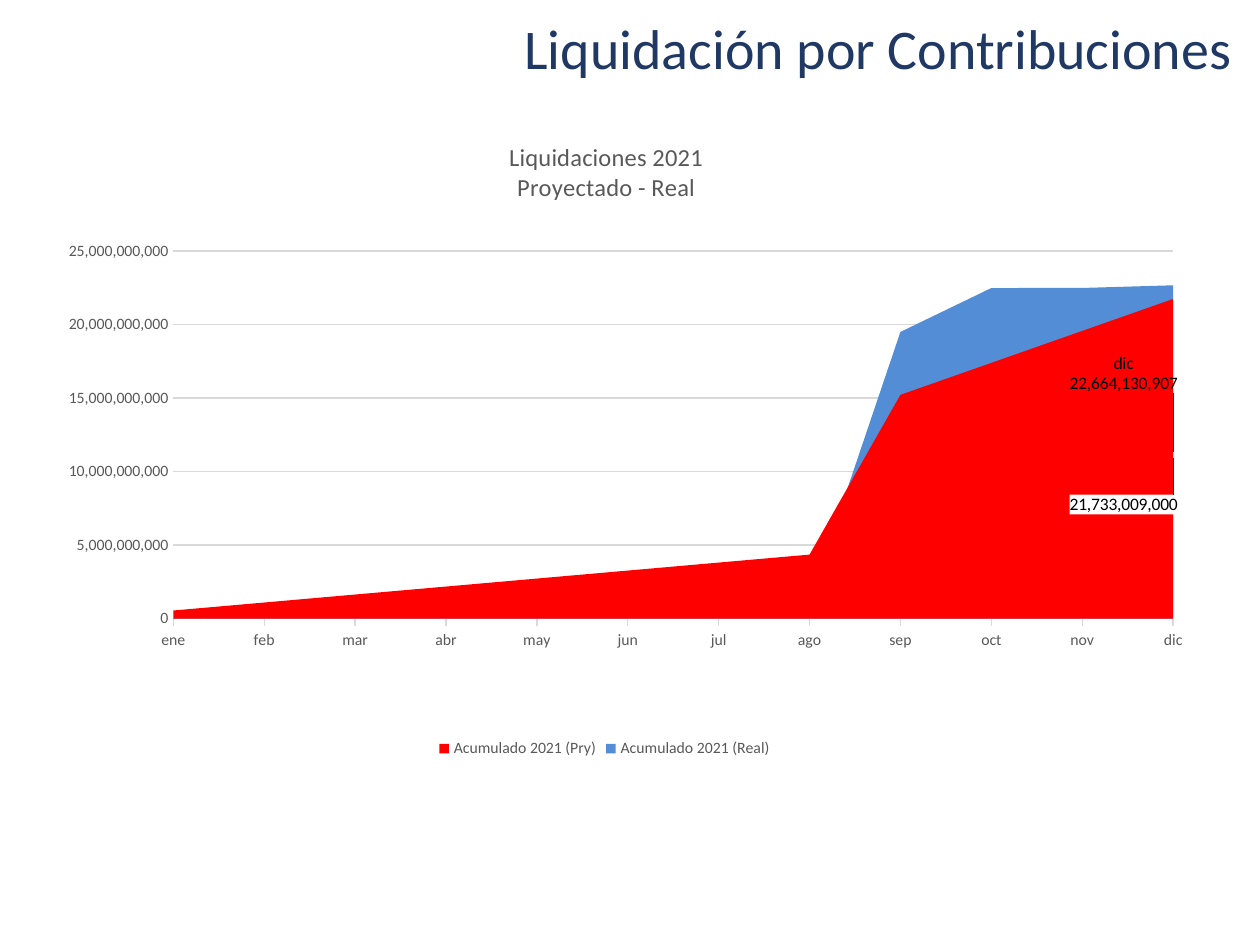
from lxml import etree
from pptx import Presentation
from pptx.chart.data import CategoryChartData
from pptx.dml.color import RGBColor
from pptx.enum.chart import XL_CHART_TYPE, XL_LEGEND_POSITION, XL_TICK_MARK
from pptx.enum.text import MSO_ANCHOR, MSO_AUTO_SIZE, PP_ALIGN
from pptx.oxml import parse_xml
from pptx.oxml.ns import nsdecls, qn
from pptx.util import Pt

PX = 914400 / 126
FONT = "Calibri"
COLORS = {"title": "203864", "text": "595959", "grid": "D9D9D9", "label": "000000",
          "projected": "FF0000", "actual": "538DD5"}
NUMBER_FORMAT = "#,##0"

TITLE = "Liquidación por Contribuciones"
TITLE_BOX = (276, 15, 969, 117)
CHART_TITLE = "Liquidaciones 2021\nProyectado - Real"
CHART_BOX = (-15, 110, 1239, 653)
MONTHS = ["ene", "feb", "mar", "abr", "may", "jun",
          "jul", "ago", "sep", "oct", "nov", "dic"]
SERIES = [
    {"name": "Acumulado 2021 (Pry)", "color": "projected",
     "values": [543325225, 1086650450, 1629975675, 2173300900, 2716626125, 3259951350,
                3803276575, 4346601800, 15213106300, 17386407200, 19559708100, 21733009000],
     "label": {"shift": (-0.04, 0.07), "month": 0, "fill": '<a:solidFill><a:srgbClr val="FFFFFF"/></a:solidFill>'}},
    {"name": "Acumulado 2021 (Real)", "color": "actual",
     "values": [42129717, 95675968, 102786052, 106756876, 1012403474, 1183775501,
                1183775501, 1215708185, 19488402712, 22479340178, 22481082497, 22664130907],
     "label": {"shift": (-0.04, -0.12), "month": 1, "fill": "<a:noFill/>"}},
]


def color(name):
    return RGBColor.from_string(COLORS[name])


def emu(box):
    return [round(value * PX) for value in box]


def style_font(font, size, color_name):
    font.name, font.size, font.bold = FONT, Pt(size), False
    font.color.rgb = color(color_name)


def style_line(line):
    line.color.rgb = color("grid")
    line.width = Pt(0.75)


def set_layout(element, index, x, y, size=None):
    """Place a chart part by fractions of the chart, as its child number index."""
    for old in element.findall(qn("c:layout")):
        element.remove(old)
    layout = parse_xml(f"<c:layout {nsdecls('c')}><c:manualLayout/></c:layout>")
    values = {"xMode": "edge", "yMode": "edge", "x": x, "y": y}
    if size:
        values = {"layoutTarget": "inner", **values, "w": size[0], "h": size[1]}
    for tag, value in values.items():
        etree.SubElement(layout[0], qn(f"c:{tag}")).set("val", str(value))
    element.insert(index, layout)


def label_last_point(series, label):
    labels = series.data_labels
    labels.show_value = False
    x, y = label["shift"]
    labels._element.insert(0, parse_xml(f"""
        <c:dLbl {nsdecls('c', 'a')}>
          <c:idx val="{len(MONTHS) - 1}"/>
          <c:layout><c:manualLayout><c:x val="{x}"/><c:y val="{y}"/></c:manualLayout></c:layout>
          <c:numFmt formatCode="{NUMBER_FORMAT}" sourceLinked="0"/>
          <c:spPr>{label['fill']}<a:ln><a:noFill/></a:ln></c:spPr>
          <c:txPr><a:bodyPr/><a:p><a:pPr><a:defRPr sz="1000" b="0">
            <a:solidFill><a:srgbClr val="{COLORS['label']}"/></a:solidFill>
            <a:latin typeface="{FONT}"/></a:defRPr></a:pPr></a:p></c:txPr>
          <c:showLegendKey val="0"/><c:showVal val="1"/>
          <c:showCatName val="{label['month']}"/><c:showSerName val="0"/>
          <c:showPercent val="0"/><c:showBubbleSize val="0"/>
          <c:separator>\n</c:separator>
        </c:dLbl>"""))


def add_title(page):
    title = page.shapes.title
    title.left, title.top, title.width, title.height = emu(TITLE_BOX)
    frame = title.text_frame
    frame.text = TITLE
    frame.auto_size = MSO_AUTO_SIZE.NONE
    frame.vertical_anchor = MSO_ANCHOR.TOP
    paragraph = frame.paragraphs[0]
    paragraph.alignment = PP_ALIGN.RIGHT
    paragraph.line_spacing = 0.9
    style_font(paragraph.runs[0].font, 32, "title")


def style_axes(chart):
    months, amounts = chart.category_axis, chart.value_axis
    for axis in (months, amounts):
        style_font(axis.tick_labels.font, 9, "text")
        axis.minor_tick_mark = XL_TICK_MARK.NONE
    months.major_tick_mark = XL_TICK_MARK.OUTSIDE
    months.has_major_gridlines = False
    style_line(months.format.line)
    amounts.major_tick_mark = XL_TICK_MARK.NONE
    amounts.minimum_scale, amounts.maximum_scale = 0, 25_000_000_000
    amounts.major_unit = 5_000_000_000
    amounts.format.line.fill.background()
    amounts.has_major_gridlines = True
    style_line(amounts.major_gridlines.format.line)
    amounts.tick_labels.number_format = NUMBER_FORMAT
    amounts.tick_labels.number_format_is_linked = False
    for crossing in amounts._element.findall(qn("c:crossBetween")):
        crossing.set("val", "midCat")


def add_chart(page):
    data = CategoryChartData(number_format=NUMBER_FORMAT)
    data.categories = MONTHS
    for item in SERIES:
        data.add_series(item["name"], item["values"])
    chart = page.shapes.add_chart(XL_CHART_TYPE.AREA, *emu(CHART_BOX), data).chart
    style_font(chart.font, 10, "label")

    frame = chart.chart_title.text_frame
    frame.text = CHART_TITLE
    for paragraph in frame.paragraphs:
        style_font(paragraph.runs[0].font, 14, "text")
    set_layout(chart.chart_title._element, 1, 0.42, 0.04)
    set_layout(chart._chartSpace.chart.plotArea, 0, 0.152, 0.216, (0.807, 0.563))

    style_axes(chart)
    chart.plots[0].vary_by_categories = False
    for series, item in zip(chart.plots[0].series, SERIES):
        series.format.fill.solid()
        series.format.fill.fore_color.rgb = color(item["color"])
        label_last_point(series, item["label"])

    chart.has_legend = True
    chart.legend.position = XL_LEGEND_POSITION.BOTTOM
    chart.legend.include_in_layout = False
    style_font(chart.legend.font, 9, "text")


def main():
    deck = Presentation()
    deck.slide_width, deck.slide_height = emu((1260, 945))
    page = deck.slides.add_slide(deck.slide_layouts[5])
    add_title(page)
    add_chart(page)
    deck.save("out.pptx")


if __name__ == "__main__":
    main()
